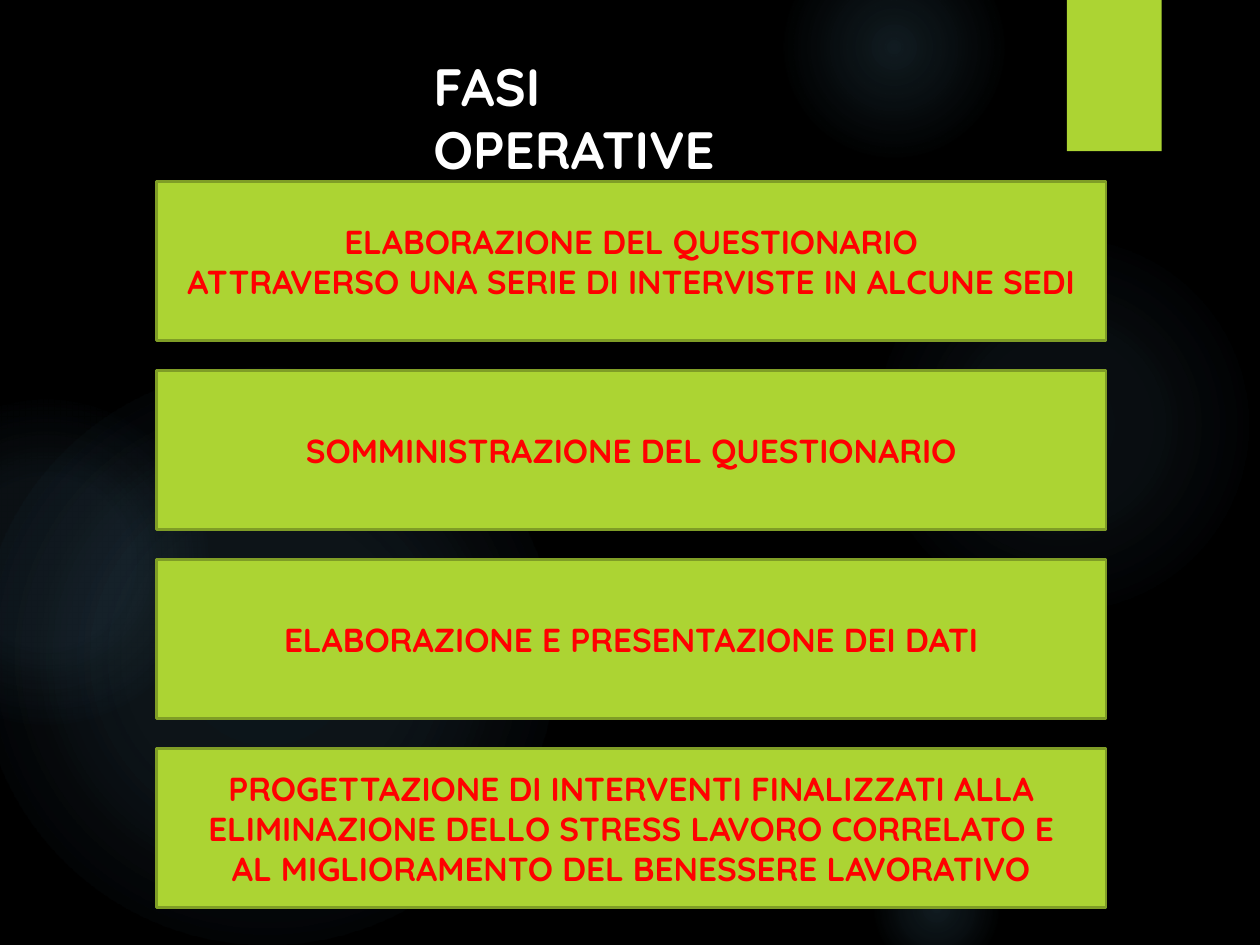
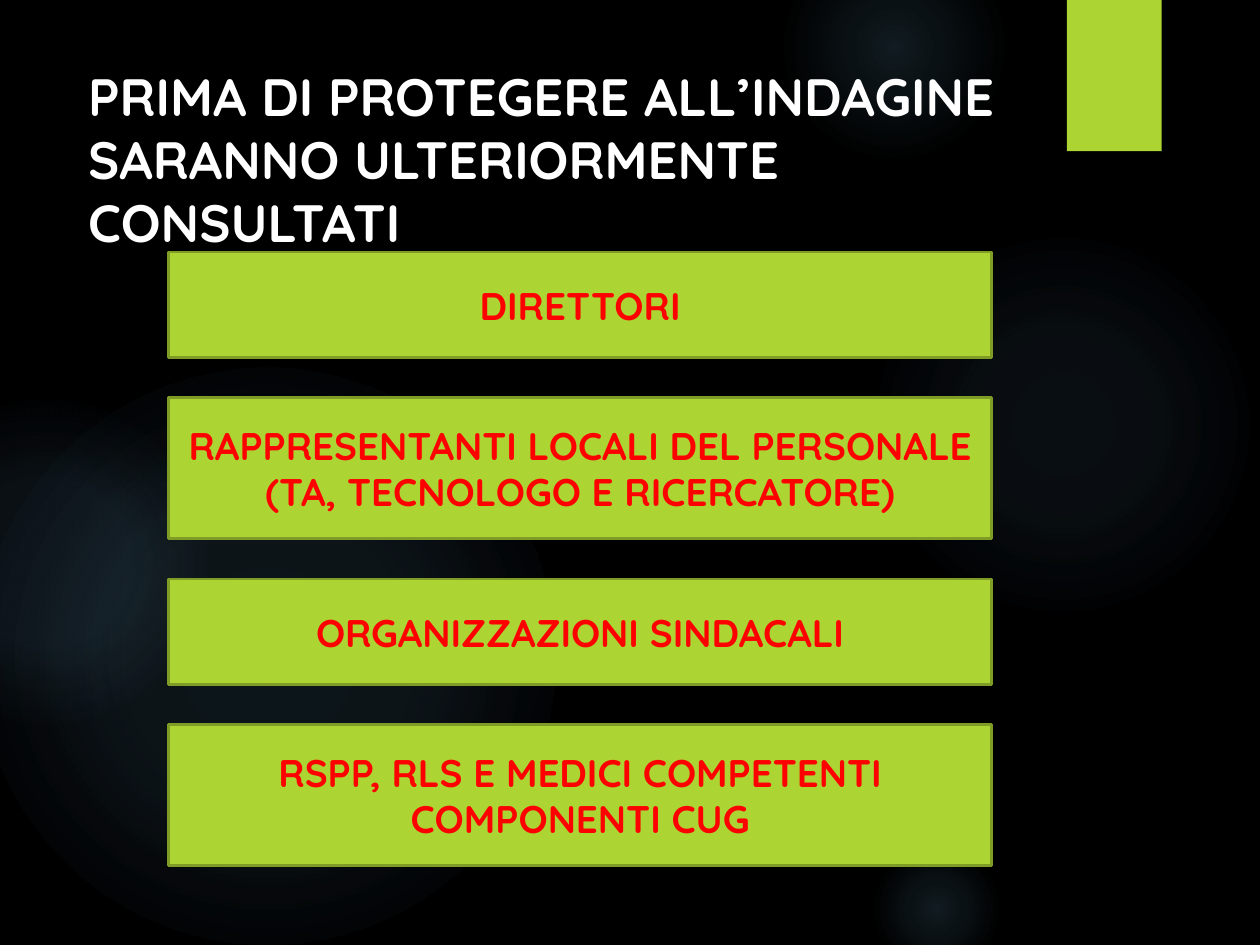
from dataclasses import dataclass

import pptx
import pptx.dml.color
import pptx.enum.shapes
import pptx.enum.text
import pptx.oxml
import pptx.oxml.ns
import pptx.util
from pptx.util import Cm

SHAPE = pptx.enum.shapes.MSO_SHAPE
ALIGN = pptx.enum.text.PP_ALIGN
ANCHOR = pptx.enum.text.MSO_ANCHOR
AUTO_SIZE = pptx.enum.text.MSO_AUTO_SIZE


@dataclass(frozen=True)
class Theme:
    font: str = "Quicksand"
    background: str = "000000"
    accent: str = "ACD433"
    outline: str = "7F9D26"
    glow: str = "7AC4F0"
    title: str = "FFFFFF"
    box_text: str = "FF0000"
    title_size: float = 30
    outline_width: float = 1.5


THEME = Theme()

SLIDES = [
    {
        "title": "FASI OPERATIVE",
        "title_area": (8.48, 0.97, 8.43, 1.55),
        "title_align": ALIGN.JUSTIFY,
        "left": 3.15, "top": 3.66, "width": 19.15, "gap": 0.61,
        "text_size": 19,
        "boxes": [
            (3.2, ["ELABORAZIONE DEL QUESTIONARIO",
                   "ATTRAVERSO UNA SERIE DI INTERVISTE IN ALCUNE SEDI"]),
            (3.2, ["SOMMINISTRAZIONE DEL QUESTIONARIO"]),
            (3.2, ["ELABORAZIONE E PRESENTAZIONE DEI DATI"]),
            (3.2, ["PROGETTAZIONE DI INTERVENTI FINALIZZATI ALLA "
                   "ELIMINAZIONE DELLO STRESS LAVORO CORRELATO E",
                   "AL MIGLIORAMENTO DEL BENESSERE LAVORATIVO"]),
        ],
    },
    {
        "title": "PRIMA DI PROTEGERE ALL’INDAGINE SARANNO ULTERIORMENTE CONSULTATI",
        "title_area": (1.52, 1.17, 20.4, 2.82),
        "title_align": ALIGN.LEFT,
        "left": 3.4, "top": 5.08, "width": 16.59, "gap": 0.81,
        "text_size": 22,
        "boxes": [
            (2.13, ["DIRETTORI"]),
            (2.84, ["RAPPRESENTANTI LOCALI DEL PERSONALE",
                    "(TA, TECNOLOGO E RICERCATORE)"]),
            (2.13, ["ORGANIZZAZIONI SINDACALI"]),
            (2.84, ["RSPP, RLS E MEDICI COMPETENTI", "COMPONENTI CUG"]),
        ],
    },
]

GLOWS = [
    (17.5, 4.65, 7.82, [(0, 7), (36, 6), (69, 0)]),
    (15.8, -1.27, 4.45, [(0, 14), (36, 7), (73, 0)]),
    (17.5, 16.94, 2.74, [(0, 14), (36, 7), (66, 0)]),
    (-0.43, 7.42, 11.63, [(0, 11), (36, 10), (75, 0)]),
    (-2.34, 8.05, 6.55, [(0, 8), (36, 8), (72, 0)]),
]
BAND = (21.51, 0, 1.91, 3.05)


def color(value):
    return pptx.dml.color.RGBColor.from_string(value)


def drawing(xml):
    namespace = pptx.oxml.ns.nsdecls("a")
    return pptx.oxml.parse_xml(xml.replace(">", f" {namespace}>", 1))


def write(shape, lines, *, size, text_color, align, anchor, auto_size=AUTO_SIZE.NONE):
    frame = shape.text_frame
    frame.word_wrap = True
    frame.auto_size = auto_size
    frame.vertical_anchor = anchor
    frame.text = "\n".join(lines)
    for paragraph in frame.paragraphs:
        paragraph.alignment = align
        font = paragraph.runs[0].font
        font.name = THEME.font
        font.size = pptx.util.Pt(size)
        font.bold = True
        font.color.rgb = color(text_color)


def add_block(slide, kind, area):
    shape = slide.shapes.add_shape(kind, *map(Cm, area))
    shape.shadow.inherit = False
    shape.fill.solid()
    shape.fill.fore_color.rgb = color(THEME.accent)
    shape.line.fill.background()
    return shape


def add_glow(slide, left, top, size, stops):
    shape = add_block(slide, SHAPE.OVAL, (left, top, size, size))
    stop_xml = "".join(
        f'<a:gs pos="{position * 1000}"><a:srgbClr val="{THEME.glow}">'
        f'<a:alpha val="{alpha * 1000}"/></a:srgbClr></a:gs>'
        for position, alpha in stops)
    gradient = drawing(
        f'<a:gradFill><a:gsLst>{stop_xml}</a:gsLst><a:path path="circle">'
        '<a:fillToRect l="50000" t="50000" r="50000" b="50000"/></a:path></a:gradFill>')
    properties = shape.element.spPr
    properties.replace(properties.find(pptx.oxml.ns.qn("a:solidFill")), gradient)
    return shape


def add_band(slide):
    shape = add_block(slide, SHAPE.RECTANGLE, BAND)
    effects = shape.element.spPr.find(pptx.oxml.ns.qn("a:effectLst"))
    effects.append(drawing(
        '<a:outerShdw blurRad="38100" dist="25400" dir="5400000">'
        '<a:srgbClr val="000000"><a:alpha val="45000"/></a:srgbClr></a:outerShdw>'))
    return shape


def decorate_layout(layout, slide):
    layout.background.fill.solid()
    layout.background.fill.fore_color.rgb = color(THEME.background)
    tree = layout.shapes.element
    for placeholder in list(layout.placeholders)[1:]:
        tree.remove(placeholder.element)
    decorations = [add_glow(slide, *glow) for glow in GLOWS] + [add_band(slide)]
    for shape in decorations:
        tree.append(shape.element)


def fill_slide(slide, content):
    title = slide.shapes.title
    title.left, title.top, title.width, title.height = map(Cm, content["title_area"])
    write(title, [content["title"]], size=THEME.title_size, text_color=THEME.title,
          align=content["title_align"], anchor=ANCHOR.TOP,
          auto_size=AUTO_SIZE.SHAPE_TO_FIT_TEXT)

    top = content["top"]
    for height, lines in content["boxes"]:
        box = add_block(slide, SHAPE.RECTANGLE,
                        (content["left"], top, content["width"], height))
        box.line.color.rgb = color(THEME.outline)
        box.line.width = pptx.util.Pt(THEME.outline_width)
        write(box, lines, size=content["text_size"], text_color=THEME.box_text,
              align=ALIGN.CENTER, anchor=ANCHOR.MIDDLE)
        top += height + content["gap"]


def main():
    presentation = pptx.Presentation()
    presentation.slide_width = Cm(25.4)
    presentation.slide_height = Cm(19.05)
    layout = presentation.slide_layouts.get_by_name("Title Only")
    slides = [presentation.slides.add_slide(layout) for _ in SLIDES]
    decorate_layout(layout, slides[0])
    for slide, content in zip(slides, SLIDES):
        fill_slide(slide, content)
    presentation.save("out.pptx")


if __name__ == "__main__":
    main()
